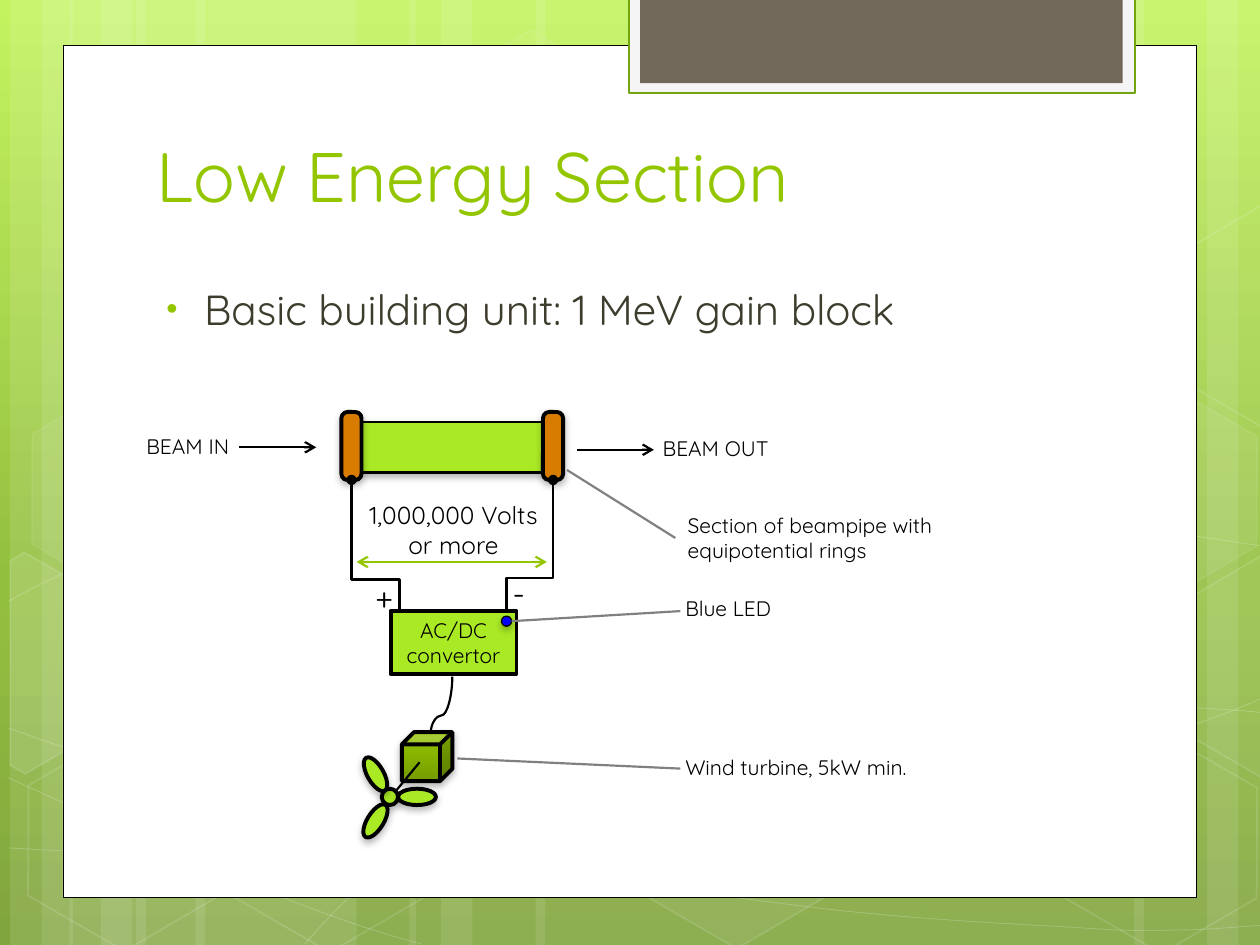
from dataclasses import dataclass
from math import cos, radians, sin
from lxml import etree
from pptx import Presentation
from pptx.dml.color import RGBColor
from pptx.enum.shapes import MSO_CONNECTOR, MSO_SHAPE
from pptx.enum.text import MSO_ANCHOR, MSO_AUTO_SIZE, PP_ALIGN
from pptx.oxml.ns import qn
from pptx.util import Inches, Pt

RECT, OVAL, HEXAGON = MSO_SHAPE.RECTANGLE, MSO_SHAPE.OVAL, MSO_SHAPE.HEXAGON
ROUNDED, CUBE = MSO_SHAPE.ROUNDED_RECTANGLE, MSO_SHAPE.CUBE
STRAIGHT, ELBOW, CURVE = MSO_CONNECTOR.STRAIGHT, MSO_CONNECTOR.ELBOW, MSO_CONNECTOR.CURVE
LEFT, CENTER = PP_ALIGN.LEFT, PP_ALIGN.CENTER
FONT, TILT = "Quicksand", 30
WHITE, BLACK, GREY = "FFFFFF", "000000", "808080"
LIME, GREEN, ORANGE = "AAEA25", "94C600", "D77C01"

prs = Presentation()
prs.slide_width, prs.slide_height = Inches(10), Inches(7.5)
slide = prs.slides.add_slide(prs.slide_layouts[1])
shapes = slide.shapes

@dataclass
class Label:
    lines: list[str]
    box: tuple
    size: int = 12
    align: PP_ALIGN = LEFT

@dataclass
class Wire:
    start: tuple
    end: tuple
    color: str = BLACK
    head: str = ""
    tail: str = ""

def sub(parent, tag: str, **attributes):
    return etree.SubElement(parent, qn(tag), {k: str(v) for k, v in attributes.items()})

def paint(fill, color: str, parent=None, opacity: int = 100) -> None:
    fill.solid()
    fill.fore_color.rgb = RGBColor.from_string(color)
    if opacity < 100:
        sub(parent.find(qn("a:solidFill"))[0], "a:alpha", val=opacity * 1000)

def paint_gradient(fill, element, stops: list) -> None:
    fill.gradient()
    gradient = next(element.iter(qn("a:gradFill")))
    stop_list = gradient.find(qn("a:gsLst"))
    for old_stop in list(stop_list):
        stop_list.remove(old_stop)
    for percent, color in stops:
        sub(sub(stop_list, "a:gs", pos=percent * 1000), "a:srgbClr", val=color)
    gradient.find(qn("a:lin")).set("ang", "5400000")

def style(shape, fill="", line="", width=1.0, opacity=100, line_opacity=100) -> None:
    shape.shadow.inherit = False
    properties = shape.element.spPr
    if fill:
        paint(shape.fill, fill, properties, opacity)
    else:
        shape.fill.background()
    if line:
        shape.line.width = Pt(width)
        paint(shape.line.fill, line, properties.find(qn("a:ln")), line_opacity)
    else:
        shape.line.fill.background()

def add_block(kind, box: tuple, rotation=0.0, adjust=None, **look):
    shape = shapes.add_shape(kind, *map(Inches, box))
    shape.rotation = rotation
    if adjust is not None:
        shape.adjustments[0] = adjust
    style(shape, **look)
    return shape

def add_part(kind, box: tuple, fill: str = LIME, width: float = 2.25, **options):
    """Add a black-outlined diagram part with a soft shadow below it."""
    shape = add_block(kind, box, fill=fill, line=BLACK, width=width, **options)
    effects = shape.element.spPr.find(qn("a:effectLst"))
    shadow = sub(effects, "a:outerShdw", blurRad=Pt(4), dist=Pt(2), dir=5400000, rotWithShape=0)
    sub(sub(shadow, "a:srgbClr", val=BLACK), "a:alpha", val=28000)
    return shape

def add_outline(points: list, close: bool, **look):
    corners = [(Inches(x), Inches(y)) for x, y in points]
    builder = shapes.build_freeform(*corners[0])
    builder.add_line_segments(corners[1:], close=close)
    outline = builder.convert_to_shape()
    style(outline, line=WHITE, **look)
    return outline

def add_wave(knots: list) -> None:
    """Draw Bezier knots: each three segments become one cubic curve."""
    wave = add_outline(knots, close=False, width=0.5, line_opacity=20)
    segments = list(wave.element.iter(qn("a:lnTo")))
    for i in range(0, len(segments), 3):
        curve = etree.Element(qn("a:cubicBezTo"))
        segments[i].addprevious(curve)
        for segment in segments[i:i + 3]:
            curve.append(segment[0])
            segment.getparent().remove(segment)

def add_cut_hexagon(points: list, center: tuple, **look) -> None:
    """Add an outline whose frame is tilted around the center."""
    c, s = cos(radians(TILT)), sin(radians(TILT))
    offsets = [(x - center[0], y - center[1]) for x, y in points]
    upright = [(center[0] + x * c + y * s, center[1] - x * s + y * c) for x, y in offsets]
    add_outline(upright, close=True, **look).rotation = TILT

def add_wire(wire: Wire, kind=STRAIGHT):
    connector = shapes.add_connector(kind, *map(Inches, wire.start + wire.end))
    connector.line.width = Pt(1.25)
    paint(connector.line.fill, wire.color)
    for tag, arrow in (("a:headEnd", wire.head), ("a:tailEnd", wire.tail)):
        if arrow:
            sub(connector.element.spPr.find(qn("a:ln")), tag, type=arrow)
    sub(connector.element.spPr, "a:effectLst")
    return connector

def add_upright_wire(wire: Wire, kind, bend: float) -> None:
    """Add a connector with vertical ends, as a turned horizontal one."""
    (x1, y1), (x2, y2) = wire.start, wire.end
    turn = 1 if x2 > x1 else -1
    half_w, half_h = turn * (y2 - y1) / 2, turn * (x1 - x2) / 2
    mid_x, mid_y = (x1 + x2) / 2, (y1 + y2) / 2
    connector = add_wire(Wire((mid_x - half_w, mid_y - half_h), (mid_x + half_w, mid_y + half_h),
                              wire.color, wire.head, wire.tail), kind)
    connector.rotation = 90 * turn % 360
    sub(next(connector.element.iter(qn("a:avLst"))), "a:gd", name="adj1", fmla=f"val {round(bend * 100000)}")

def write_lines(frame, lines: list[str], size: int, color: str, align) -> None:
    frame.text = "\n".join(lines)
    for paragraph in frame.paragraphs:
        paragraph.alignment = align
        paragraph.font.name, paragraph.font.size = FONT, Pt(size)
        paragraph.font.color.rgb = RGBColor.from_string(color)

def add_label(label: Label) -> None:
    frame = shapes.add_textbox(*map(Inches, label.box)).text_frame
    frame.word_wrap, frame.auto_size = False, MSO_AUTO_SIZE.SHAPE_TO_FIT_TEXT
    write_lines(frame, label.lines, label.size, BLACK, label.align)

def place_text(holder, box: tuple, text: str, size: int, color: str, anchor) -> None:
    holder.left, holder.top, holder.width, holder.height = map(Inches, box)
    frame = holder.text_frame
    frame.auto_size, frame.vertical_anchor = MSO_AUTO_SIZE.NONE, anchor
    write_lines(frame, [text], size, color, LEFT)
    holder.element.getparent().append(holder.element)

# Background: gradient and translucent vertical bands
paint_gradient(slide.background.fill, slide.element, [(0, "C3F35F"), (62, "93BF3F"), (100, "81A53E")])
for left, width in [(1.08, 1.75), (0.08, 0.5), (0.33, 0.83), (1.55, 1.75), (0.55, 0.5), (0.8, 0.83),
                    (7.33, 1.75), (9.58, 0.5), (9, 0.83), (4.25, 3.08), (3.25, 0.5), (3.5, 0.83)]:
    add_block(RECT, (left, 0, width, 7.5), fill=WHITE, opacity=10)
# Background: thin waves
for knots in [
        [(0.07, 6.73), (0.61, 6.76), (1.15, 6.79), (1.9, 6.78), (2.65, 6.77), (3.58, 6.75), (4.58, 6.65),
         (5.58, 6.55), (7, 6.36), (7.92, 6.17), (8.83, 5.98), (9.77, 5.68), (10.07, 5.51)],
        [(0.07, 4.77), (0.36, 4.61), (0.65, 4.46), (1.21, 4.31), (1.78, 4.16), (2.59, 3.94), (3.47, 3.87),
         (4.36, 3.8), (5.44, 3.79), (6.54, 3.87), (7.64, 3.95), (9.47, 4.26), (10.07, 4.34)],
        [(0.06, 6.17), (1.27, 6.72), (2.47, 7.27), (3.34, 7.49)],
        [(0.07, 5.78), (0.38, 5.89), (0.7, 6), (1.28, 6.16), (1.86, 6.31), (2.73, 6.56), (3.57, 6.73),
         (4.4, 6.9), (5.45, 7.08), (6.28, 7.18), (7.11, 7.29), (8, 7.33), (8.53, 7.36),
         (9.05, 7.4), (9.19, 7.38), (9.45, 7.38), (9.71, 7.37), (9.89, 7.35), (10.07, 7.34)],
        [(2.42, 7.49), (2.6, 7.29), (2.78, 7.09), (3.02, 6.91), (3.26, 6.73), (3.6, 6.53), (3.88, 6.39),
         (4.16, 6.25), (4.33, 6.19), (4.7, 6.09), (5.06, 5.99), (5.73, 5.85), (6.08, 5.78),
         (6.44, 5.71), (6.49, 5.71), (6.8, 5.69), (7.11, 5.66), (7.6, 5.63), (7.94, 5.62),
         (8.29, 5.61), (8.86, 5.62), (8.86, 5.62), (9.08, 5.62), (9.31, 5.62), (9.53, 5.62),
         (9.71, 5.63), (9.88, 5.64), (10.06, 5.66)]]:
    add_wave(knots)
# Background: hexagons (left, top, fill opacity, line opacity) and those cut by the edges
for left, top, opacity, line_opacity in [
        (3.34, 0.36, 4, 8), (4.97, 5.89, 6, 12), (0.11, 5.91, 0, 12), (0.14, 3.12, 7, 8),
        (1.74, 5.92, 0, 12), (7.53, 4.53, 10, 12), (8.34, 5.93, 0, 12), (8.34, 3.14, 7, 8)]:
    add_block(HEXAGON, (left, top, 1.75, 1.52), TILT, 0.285, fill=WHITE if opacity else "",
              opacity=opacity, line=WHITE, line_opacity=line_opacity)
RIGHT_CUT = [(9.26, 4.85), (10.01, 4.41), (10.09, 4.46), (10.09, 6.13), (10.02, 6.17), (9.26, 5.73)]
add_cut_hexagon([(0.08, 4.45), (0.19, 4.38), (0.96, 4.82), (0.95, 5.7), (0.2, 6.14), (0.08, 6.07)],
                (0.36, 5.35), fill=WHITE, opacity=10, line_opacity=12)
add_cut_hexagon(RIGHT_CUT, (9.85, 5.2), fill=WHITE, opacity=4, line_opacity=12)
add_cut_hexagon([(x, y - 2.78) for x, y in RIGHT_CUT], (9.85, 2.41), line_opacity=12)
# White panel and top tab
add_block(RECT, (0.5, 0.36, 9, 6.76), fill=WHITE, line=BLACK, width=0.5)
add_block(RECT, (4.99, -0.02, 4.02, 0.76), fill="F5F5F5", line="74A510", width=1.25)
add_block(RECT, (5.08, -0.02, 3.83, 0.68), fill="71685A")
# Title and bullet
place_text(shapes.title, (1.14, 0.95, 7.68, 0.82), "Low Energy Section", 40, GREEN, MSO_ANCHOR.BOTTOM)
body = slide.placeholders[1]
place_text(body, (1.14, 2.2, 7.41, 0.67), "Basic building unit: 1 MeV gain block", 24, "3E3D2D", MSO_ANCHOR.TOP)
bullet = next(body.element.iter(qn("a:pPr")))
bullet.set("marL", str(Inches(0.38)))
bullet.set("indent", str(Inches(-0.3)))
for position, (tag, key, value) in enumerate([("a:buClr", "", ""), ("a:buSzPct", "val", "76000"),
                                              ("a:buFont", "typeface", "Arial"), ("a:buChar", "char", "•")]):
    bullet.insert(position, etree.Element(qn(tag), {key: value} if key else {}))
sub(bullet[0], "a:srgbClr", val=GREEN)
# Wind turbine hub and blades, beampipe with rings, generator and shaft
add_part(OVAL, (3.03, 6.26, 0.13, 0.13))
for left, top, angle in [(3.16, 6.26, 0), (2.83, 6.08, 60.4), (2.83, 6.45, 301.7)]:
    add_part(OVAL, (left, top, 0.3, 0.13), rotation=angle)
add_part(RECT, (2.87, 3.35, 1.44, 0.4), width=1.5)
for ring_left in (4.31, 2.71):
    add_part(ROUNDED, (ring_left, 3.27, 0.16, 0.54), ORANGE, adjust=0.31)
generator = add_part(CUBE, (3.19, 5.81, 0.4, 0.39))
paint_gradient(generator.fill, generator.element, [(0, GREEN), (100, "769D00")])
add_wire(Wire((3.33, 6.05), (3.14, 6.28)))
# Converter and its wiring
converter = add_block(RECT, (3.1, 4.85, 1, 0.5), fill=LIME, line=BLACK, width=2.25)
converter.text_frame.word_wrap = False
write_lines(converter.text_frame, ["AC/DC", "convertor"], 12, BLACK, CENTER)
add_upright_wire(Wire((3.42, 5.81), (3.59, 5.37)), CURVE, 0.3)
add_upright_wire(Wire((3.17, 4.85), (2.79, 3.81), tail="oval"), ELBOW, 0.24)
add_upright_wire(Wire((4.02, 4.85), (4.39, 3.81), tail="oval"), ELBOW, 0.25)
# Labels
for label in [Label(["+"], (2.88, 4.53, 0.35, 0.4), 18), Label(["-"], (3.97, 4.5, 0.29, 0.4), 18),
              Label(["1,000,000 Volts", "or more"], (2.82, 3.92, 1.56, 0.57), 14, CENTER),
              Label(["BEAM IN"], (1.05, 3.39, 0.88, 0.3), align=CENTER),
              Label(["Section of beampipe with", "equipotential rings"], (5.36, 4.02, 2.31, 0.5)),
              Label(["Wind turbine, 5kW min."], (5.34, 5.94, 2.05, 0.3)),
              Label(["Blue LED"], (5.34, 4.68, 0.88, 0.3)),
              Label(["BEAM OUT"], (5.16, 3.41, 1.04, 0.3), align=CENTER)]:
    add_label(label)
# Blue LED, arrows and leader lines
add_part(OVAL, (3.98, 4.89, 0.08, 0.08), "0000FF", 0.75)
for wire in [Wire((2.83, 4.46), (4.34, 4.46), GREEN, "arrow", "arrow"),
             Wire((1.9, 3.55), (2.51, 3.55), tail="arrow"), Wire((4.58, 3.57), (5.19, 3.57), tail="arrow"),
             Wire((5.36, 4.27), (4.5, 3.73), GREY), Wire((5.4, 4.85), (4.06, 4.93), GREY),
             Wire((5.4, 6.1), (3.63, 6.02), GREY)]:
    add_wire(wire)
prs.save("out.pptx")
